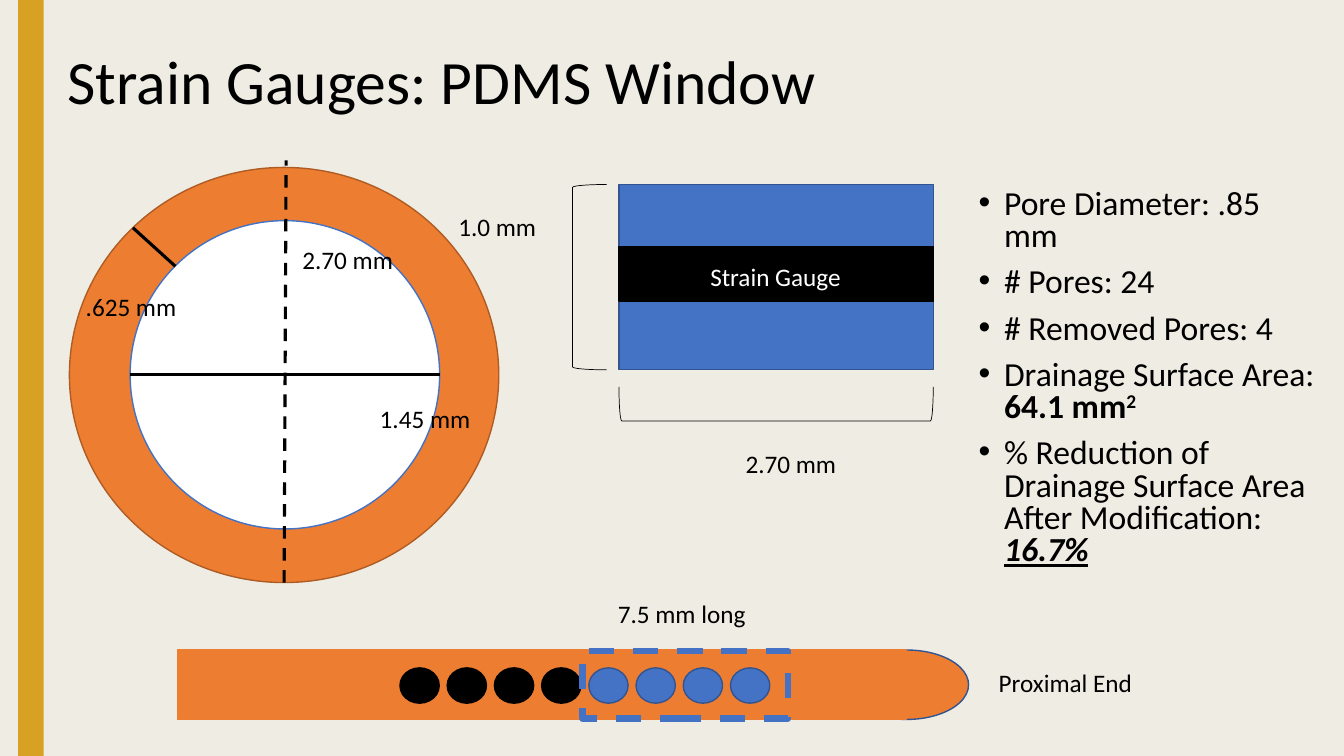
from lxml import etree
from pptx import Presentation
from pptx import util as u
from pptx.dml.color import RGBColor
from pptx.enum import dml, shapes, text
from pptx.oxml.ns import qn

Cm = u.Cm
SHAPE = shapes.MSO_SHAPE
FONT = "Calibri"
COLORS = {
    "paper": "EFEDE3", "gold": "D7A124", "black": "000000", "white": "FFFFFF",
    "orange": "ED7D31", "rust": "AF5C24", "blue": "4472C4", "navy": "325491",
}


def rgb(name):
    return RGBColor.from_string(COLORS[name])


# Drawing helpers, all lengths in centimetres
def style_line(line, color, width, dashed=False):
    line.color.rgb = rgb(color)
    line.width = u.Pt(width)
    if dashed:
        line.dash_style = dml.MSO_LINE.DASH


def add_shape(s, kind, x, y, w, h, fill=None, line=None, width=1, dashed=False):
    sp = s.shapes.add_shape(kind, Cm(x), Cm(y), Cm(w), Cm(h))
    sp.shadow.inherit = False
    if fill:
        sp.fill.solid()
        sp.fill.fore_color.rgb = rgb(fill)
    else:
        sp.fill.background()
    if line:
        style_line(sp.line, line, width, dashed)
    else:
        sp.line.fill.background()
    return sp


def add_line(s, x1, y1, x2, y2, dashed=False):
    cn = s.shapes.add_connector(shapes.MSO_CONNECTOR.STRAIGHT, Cm(x1), Cm(y1), Cm(x2), Cm(y2))
    style_line(cn.line, "black", 2.25, dashed)
    etree.SubElement(cn._element.spPr, qn("a:effectLst"))


def add_run(p, words, size, color="black", bold=False, italic=False, underline=False):
    r = p.add_run()
    r.text = words
    f = r.font
    f.name, f.size, f.color.rgb = FONT, u.Pt(size), rgb(color)
    f.bold, f.italic, f.underline = bold, italic, underline
    return r


def add_label(s, words, x, y, w, color="black"):
    tf = s.shapes.add_textbox(Cm(x), Cm(y), Cm(w), Cm(1.03)).text_frame
    tf.word_wrap = True
    add_run(tf.paragraphs[0], words, 18, color)


def place(sp, x, y, w, h):
    sp.left, sp.top, sp.width, sp.height = Cm(x), Cm(y), Cm(w), Cm(h)
    tf = sp.text_frame
    tf.word_wrap = True
    tf.auto_size = text.MSO_AUTO_SIZE.NONE
    return tf


# Title and bullet list
def fill_title(s, x, y, w, h):
    tf = place(s.shapes.title, x, y, w, h)
    tf.vertical_anchor = text.MSO_ANCHOR.MIDDLE
    p = tf.paragraphs[0]
    p.alignment = text.PP_ALIGN.LEFT
    p.line_spacing = 0.9
    add_run(p, "Strain Gauges: PDMS Window", 44)


def fill_facts(s, x, y, w, h):
    tf = place(s.placeholders[1], x, y, w, h)
    tf.vertical_anchor = text.MSO_ANCHOR.TOP
    strong = {"bold": True}
    facts = [
        [("Pore Diameter: .85 mm", {})],
        [("# Pores: 24", {})],
        [("# Removed Pores: 4", {})],
        [("Drainage Surface Area: ", {}), ("64.1 mm", strong), ("2", strong)],
        [("% Reduction of Drainage Surface Area After Modification: ", {}),
         ("16.7%", {"bold": True, "italic": True, "underline": True})],
    ]
    for i, runs in enumerate(facts):
        p = tf.add_paragraph() if i else tf.paragraphs[0]
        p.line_spacing = 0.8
        p.space_before = u.Pt(10 if i else 0)
        pPr = p._p.get_or_add_pPr()
        pPr.set("marL", str(Cm(0.64)))
        pPr.set("indent", str(-Cm(0.64)))
        etree.SubElement(pPr, qn("a:buFont")).set("typeface", "Arial")
        etree.SubElement(pPr, qn("a:buChar")).set("char", "•")
        for words, look in runs:
            r = add_run(p, words, 24, **look)
            if words == "2":
                r._r.get_or_add_rPr().set("baseline", "30000")


# Cross-section of the tube
def draw_cross_section(s, x, y, w, h):
    inner_x, inner_y, inner_w, inner_h = x + 1.53, y + 1.34, 7.8, 7.77
    middle = inner_y + inner_h / 2
    add_shape(s, SHAPE.OVAL, x, y, w, h, "orange", "rust")
    add_shape(s, SHAPE.OVAL, inner_x, inner_y, inner_w, inner_h, "white", "blue")
    add_line(s, inner_x, middle, inner_x + inner_w, middle)
    add_line(s, x + w / 2, y + h, x + w / 2 + 0.05, y - 0.18, dashed=True)
    add_line(s, x + 1.6, y + 1.52, x + 2.67, y + 2.49)
    for words, dx, dy in [("1.45 mm", 7.57, 5.81), ("2.70 mm", 5.62, 1.8),
                          (".625 mm", 0.16, 2.99)]:
        add_label(s, words, x + dx, y + dy, 3.1)


# Window with the strain gauge and its dimensions
def draw_window(s, x, y, w, h):
    depth = 0.86
    add_shape(s, SHAPE.RECTANGLE, x, y, w, h, "blue", "navy")
    add_shape(s, SHAPE.RECTANGLE, x, y + 1.57, w, 1.37, "black", "black")
    add_label(s, "Strain Gauge", x + 2.05, y + 1.8, 5.59, "white")
    add_shape(s, SHAPE.LEFT_BRACKET, x - 1.17, y, depth, h, line="black", width=0.5)
    below = add_shape(s, SHAPE.LEFT_BRACKET, x + (w - depth) / 2,
                      y + h + 0.86 - w / 2, depth, w, line="black", width=0.5)
    below.rotation = 270
    add_label(s, "1.0 mm", x - 4.3, y + 0.56, 3.28)
    add_label(s, "2.70 mm", x + 2.94, y + 6.53, 3.28)


# Side view of the tube with its pores
def draw_tube(s, x, y, w, h):
    add_shape(s, SHAPE.OVAL, x + w - 1.54, y, 3.12, h, "orange", "navy")
    add_shape(s, SHAPE.RECTANGLE, x, y, w, h, "orange", "orange")

    def pores(first, fill, line):
        for i in range(first, first + 4):
            add_shape(s, SHAPE.OVAL, x + 5.61 + 1.19 * i, y + 0.45, 0.99, 0.89, fill, line)

    pores(0, "black", "black")
    add_shape(s, SHAPE.RECTANGLE, x + 10.21, y + 0.03, 5.18, 1.7,
              "orange", "blue", 4.5, dashed=True)
    pores(4, "blue", "navy")
    add_label(s, "7.5 mm long", x + 10.85, y - 1.42, 4.78)
    add_label(s, "Proximal End", x + 20.45, y + 0.31, 4.78)


def main():
    prs = Presentation()
    prs.slide_width, prs.slide_height = Cm(33.87), Cm(19.05)
    s = prs.slides.add_slide(prs.slide_layouts[1])
    s.background.fill.solid()
    s.background.fill.fore_color.rgb = rgb("paper")
    add_shape(s, SHAPE.RECTANGLE, 0.46, 0, 0.64, 19.05, "gold")
    fill_title(s, 1.45, 0.28, 29.21, 3.68)
    fill_facts(s, 24.41, 4.65, 9.14, 9.45)
    draw_cross_section(s, 1.75, 4.22, 10.82, 10.46)
    draw_window(s, 15.6, 4.65, 7.92, 4.67)
    draw_tube(s, 4.47, 16.38, 18.36, 1.75)
    prs.save("out.pptx")


if __name__ == "__main__":
    main()
